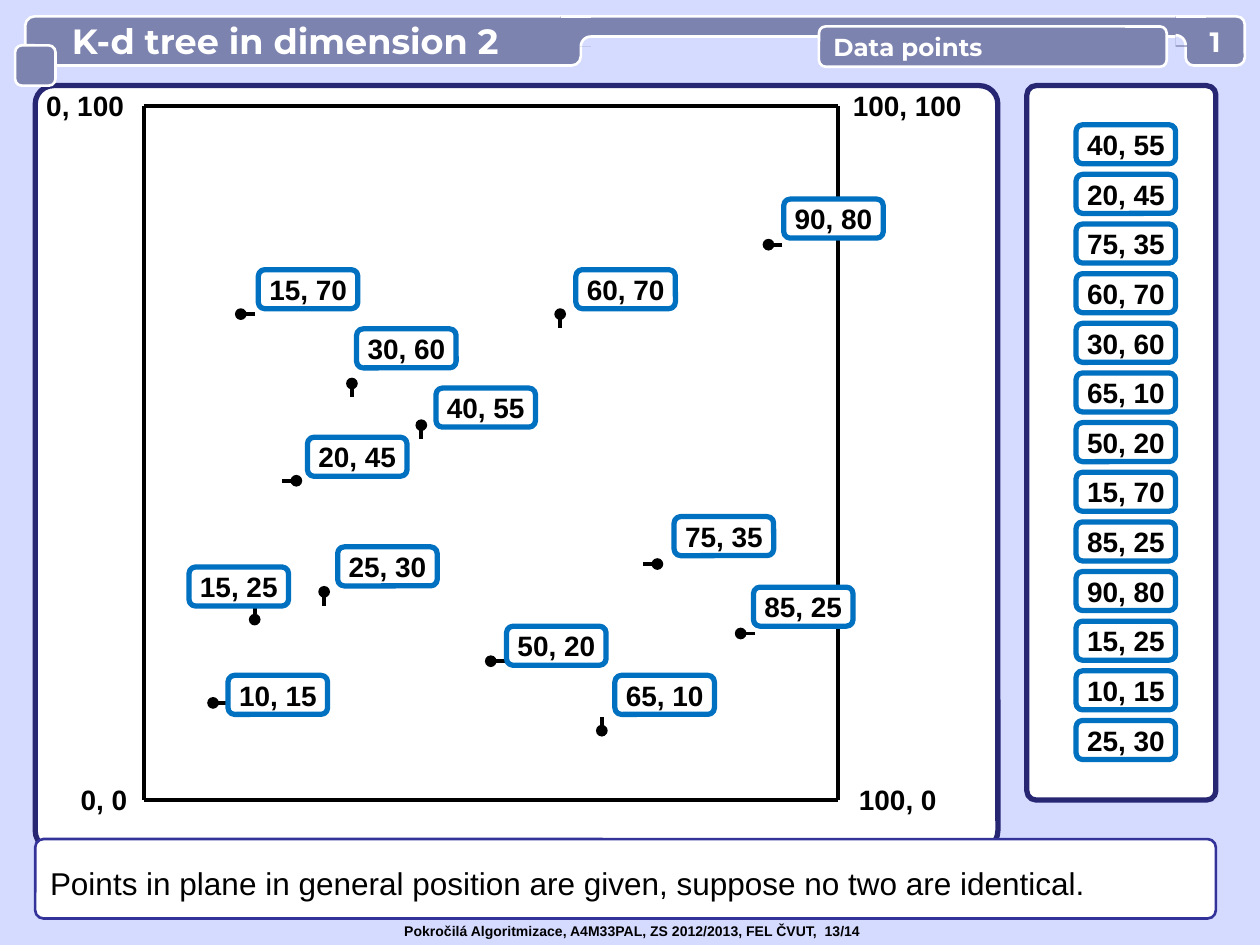
import math
import pptx
import pptx.util
import pptx.dml.color
import pptx.enum.shapes
import pptx.enum.text
import pptx.oxml.ns
from lxml import etree

Inches, Pt = pptx.util.Inches, pptx.util.Pt
SHAPE = pptx.enum.shapes.MSO_SHAPE
ALIGN = pptx.enum.text.PP_ALIGN
WHITE, BLACK, BACKDROP = "FFFFFF", "000000", "D5DAFF"
HEADER, NAVY, BLUE = "7D83AF", "262673", "0070C0"

# Content: label, dot in plot steps, direction of its stub, label left and top
RIGHT, LEFT, UP, DOWN = (1, 0), (-1, 0), (0, -1), (0, 1)
POINTS = [
    ("40, 55", (20, 27), DOWN, (3.46, 3.08)),
    ("20, 45", (11, 23), LEFT, (2.44, 3.47)),
    ("75, 35", (37, 17), LEFT, (5.35, 4.1)),
    ("60, 70", (30, 35), DOWN, (4.57, 2.14)),
    ("30, 60", (15, 30), DOWN, (2.83, 2.61)),
    ("65, 10", (33, 5), UP, (4.88, 5.36)),
    ("50, 20", (25, 10), RIGHT, (4.02, 4.97)),
    ("15, 70", (7, 35), RIGHT, (2.05, 2.14)),
    ("85, 25", (43, 12), RIGHT, (5.98, 4.66)),
    ("90, 80", (45, 40), RIGHT, (6.22, 1.58)),
    ("15, 25", (8, 13), UP, (1.5, 4.5)),
    ("10, 15", (5, 7), RIGHT, (1.81, 5.36)),
    ("25, 30", (13, 15), DOWN, (2.68, 4.34)),
]
CORNERS = [("0, 0", 0.43, 6.19, 0.79), ("100, 0", 6.73, 6.19, 0.79),
           ("0, 100", 0.28, 0.68, 0.79), ("100, 100", 6.73, 0.68, 0.94)]
NOTE = "Points in plane in general position are given, suppose no two are identical."
FOOTER = "Pokročilá Algoritmizace, A4M33PAL, ZS 2012/2013, FEL ČVUT,  13/14"

# Geometry: plot square of 50 steps, list of labels
PLOT_LEFT, PLOT_BOTTOM, PLOT_SIZE, STEPS = 1.14, 6.35, 5.51, 50
STEP = PLOT_SIZE / STEPS
LABEL_WIDTH, LABEL_HEIGHT = 0.79, 0.31
LIST_LEFT, LIST_TOP, LIST_PITCH = 8.54, 0.99, 0.394

deck = pptx.Presentation()
deck.slide_width, deck.slide_height = Inches(10), Inches(7.5)
page = deck.slides.add_slide(deck.slide_layouts[6])


def rgb(value):
    return pptx.dml.color.RGBColor.from_string(value)


def paint(shape, fill, line, weight):
    shape.shadow.inherit = False
    if fill:
        shape.fill.solid()
        shape.fill.fore_color.rgb = rgb(fill)
    else:
        shape.fill.background()
    if line:
        shape.line.color.rgb = rgb(line)
        shape.line.width = Pt(weight)
    else:
        shape.line.fill.background()


def add_box(left, top, width, height, fill=None, line=None, weight=1.5,
            round_by=0.167):
    kind = SHAPE.ROUNDED_RECTANGLE if round_by else SHAPE.RECTANGLE
    box = page.shapes.add_shape(kind, Inches(left), Inches(top),
                                Inches(width), Inches(height))
    if round_by:
        box.adjustments[0] = round_by
    paint(box, fill, line, weight)
    return box


def write(box, text, size, color=BLACK, font="Arial", bold=True,
          align=ALIGN.CENTER, inset=0, wrap=True, spacing=None):
    frame = box.text_frame
    frame.word_wrap = wrap
    frame.vertical_anchor = pptx.enum.text.MSO_ANCHOR.MIDDLE
    frame.margin_left = frame.margin_right = Inches(inset)
    frame.margin_top = frame.margin_bottom = 0
    para = frame.paragraphs[0]
    para.alignment = align
    if spacing:
        para.line_spacing = spacing
    span = para.add_run()
    span.text = text
    span.font.name, span.font.size, span.font.bold = font, Pt(size), bold
    span.font.color.rgb = rgb(color)


def add_line(start, end, color=BLACK, weight=2.25, dot=False):
    line = page.shapes.add_connector(
        pptx.enum.shapes.MSO_CONNECTOR.STRAIGHT,
        *[Inches(value) for value in (*start, *end)])
    line.line.color.rgb = rgb(color)
    line.line.width = Pt(weight)
    if dot:
        etree.SubElement(line.line._get_or_add_ln(),
                         pptx.oxml.ns.qn("a:tailEnd"), type="oval")
    etree.SubElement(line._element.spPr, pptx.oxml.ns.qn("a:effectLst"))


def add_label(text, left, top):
    box = add_box(left, top, LABEL_WIDTH, LABEL_HEIGHT, WHITE, BLUE, 3)
    write(box, text, 16)


def add_outline(points, fill, line, closed):
    builder = page.shapes.build_freeform(
        Inches(points[0][0]), Inches(points[0][1]), scale=1.0)
    builder.add_line_segments([(Inches(x), Inches(y)) for x, y in points[1:]],
                              close=closed)
    paint(builder.convert_to_shape(), fill, line, 1.5)


def add_joint(left, edge, top, side):
    """Blend the header bar into a tab: side is 1 right of a tab, -1 left of it."""
    add_box(left, 0.13, 0.24, 0.24, HEADER, round_by=0)
    add_line((left, 0.13), (left + 0.24, 0.13), WHITE, 1.5)
    radius = 0.08
    angles = [math.pi / 2 * i / 12 for i in range(13)]
    arc = [(edge + side * radius * (1 - math.sin(a)),
            top + radius * (1 - math.cos(a))) for a in angles]
    add_outline(arc + [(edge + side * radius, top + radius)], BACKDROP, None, True)
    add_outline(arc, None, WHITE, False)


def main():
    page.background.fill.solid()
    page.background.fill.fore_color.rgb = rgb(BACKDROP)

    # Panels for the list and the plot
    add_box(8.15, 0.68, 1.5, 5.67, WHITE, NAVY, 3, 0.049)
    add_box(0.28, 0.68, 7.64, 6.06, WHITE, NAVY, 3, 0.024)

    # Plot frame
    right, top = PLOT_LEFT + PLOT_SIZE, PLOT_BOTTOM - PLOT_SIZE
    corners = [(PLOT_LEFT, PLOT_BOTTOM), (PLOT_LEFT, top),
               (right, top), (right, PLOT_BOTTOM)]
    for start, end in zip(corners, corners[1:] + corners[:1]):
        add_line(start, end)

    # Dots with stubs, then their labels and the list
    for _, (column, row), (dx, dy), _ in POINTS:
        x, y = PLOT_LEFT + column * STEP, PLOT_BOTTOM - row * STEP
        add_line((x + dx * STEP, y + dy * STEP), (x, y), dot=True)
    for index, (text, _, _, place) in enumerate(POINTS):
        add_label(text, *place)
        add_label(text, LIST_LEFT, LIST_TOP + index * LIST_PITCH)

    # Note under the plot
    note = add_box(0.28, 6.66, 9.37, 0.63, WHITE, "333399", 1.5, 0.103)
    write(note, NOTE, 18, bold=False, align=ALIGN.LEFT, inset=0.1, spacing=1.2)

    # Header
    title = add_box(0.2, 0.13, 4.41, 0.39, HEADER, WHITE, round_by=0.188)
    write(title, "K-d tree in dimension 2", 20, WHITE, "Montserrat",
          align=ALIGN.LEFT, inset=0.35)
    add_box(4.61, 0.13, 4.88, 0.16, HEADER, WHITE, round_by=0.5)
    add_joint(4.45, 4.61, 0.29, 1)
    add_box(0.12, 0.36, 0.32, 0.32, HEADER, WHITE)
    number = add_box(9.41, 0.13, 0.47, 0.39, HEADER, WHITE)
    add_joint(9.33, 9.41, 0.28, -1)
    write(number, "1", 16, WHITE, "Montserrat", inset=0.04)
    topic = add_box(6.5, 0.21, 2.76, 0.32, HEADER, WHITE)
    write(topic, "Data points", 14, WHITE, "Montserrat",
          align=ALIGN.LEFT, inset=0.1)

    # Corner coordinates and footer
    for text, left, top, width in CORNERS:
        write(add_box(left, top, width, LABEL_HEIGHT), text, 16)
    footer = page.shapes.add_textbox(Inches(3.11), Inches(7.27),
                                     Inches(3.9), Inches(0.24))
    write(footer, FOOTER, 8, align=ALIGN.LEFT, inset=0.1, wrap=False)

    deck.save("out.pptx")


if __name__ == "__main__":
    main()
